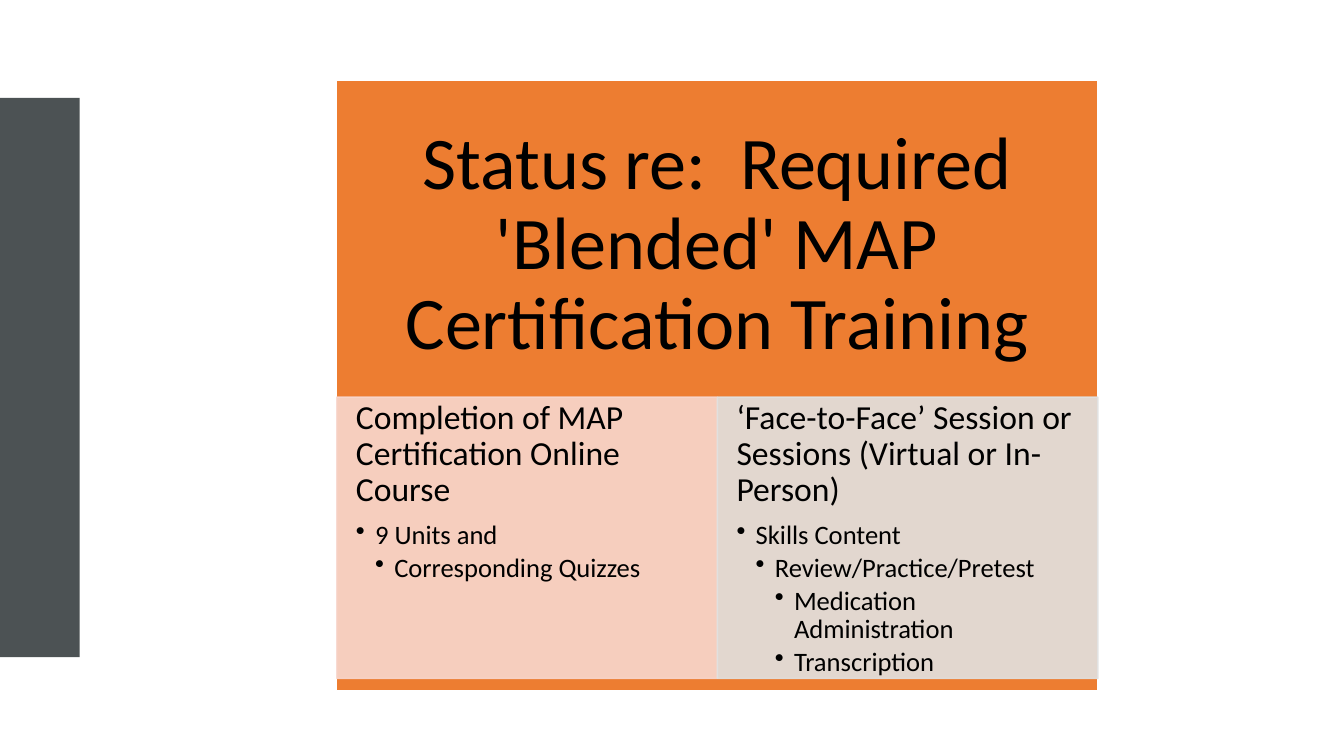
from lxml.etree import SubElement
from pptx import Presentation
from pptx.dml.color import RGBColor
from pptx.enum.shapes import MSO_SHAPE
from pptx.enum.text import MSO_ANCHOR, PP_ALIGN
from pptx.oxml.ns import qn
from pptx.util import Inches, Pt

COLORS = {
    "bar": "4C5254",
    "orange": "ED7D31",
    "rose": "F8D7CE",
    "gray": "E1E1E1",
    "white": "FFFFFF",
    "text": "000000",
}


class SlideBuilder:
    font = "Calibri"
    indent = 0.19

    def __init__(self, slide):
        self.s = slide

    def rect(self, x, y, w, h, fill, line=None, alpha=None):
        sp = self.s.shapes.add_shape(
            MSO_SHAPE.RECTANGLE, Inches(x), Inches(y), Inches(w), Inches(h))
        sp.shadow.inherit = False
        sp.fill.solid()
        sp.fill.fore_color.rgb = RGBColor.from_string(COLORS[fill])
        if line:
            sp.line.color.rgb = RGBColor.from_string(COLORS[line])
            sp.line.width = Pt(1)
        else:
            sp.line.fill.background()
        if alpha:
            for clr in sp._element.spPr.iter(qn("a:srgbClr")):
                SubElement(clr, qn("a:alpha"), val=str(alpha * 1000))
        return sp

    def textbox(self, x, y, w, h):
        return self.s.shapes.add_textbox(
            Inches(x), Inches(y), Inches(w), Inches(h))

    def frame(self, sp, inset_x, inset_y, anchor):
        tf = sp.text_frame
        tf.word_wrap = True
        tf.vertical_anchor = anchor
        tf.margin_left = tf.margin_right = Inches(inset_x)
        tf.margin_top = tf.margin_bottom = Inches(inset_y)
        return tf

    def paragraph(self, tf, text, size, after, align=PP_ALIGN.LEFT, level=0):
        p = tf.paragraphs[0]
        if p.runs:
            p = tf.add_paragraph()
        p.alignment = align
        p.line_spacing = 0.9
        p.space_after = Pt(after)
        if level:
            p.level = level
            pPr = p._p.get_or_add_pPr()
            pPr.set("marL", str(Inches(self.indent * level)))
            pPr.set("indent", str(-Inches(self.indent)))
            SubElement(pPr, qn("a:buChar"), char="•")
        r = p.add_run()
        r.text = text
        r.font.name = self.font
        r.font.size = Pt(size)
        r.font.color.rgb = RGBColor.from_string(COLORS["text"])

    def panel(self, x, y, w, h, fill, heading, bullets):
        sp = self.rect(x, y, w, h, fill, line=fill, alpha=90)
        tf = self.frame(sp, 0.19, 0.03, MSO_ANCHOR.TOP)
        self.paragraph(tf, heading, 24, 9)
        for level, text in bullets:
            self.paragraph(tf, text, 19, 2.85, level=level)


def main():
    prs = Presentation()
    prs.slide_width, prs.slide_height = Inches(13.33), Inches(7.5)
    b = SlideBuilder(prs.slides.add_slide(prs.slide_layouts[6]))

    # Side bar and orange block
    b.rect(0, 0.97, 0.79, 5.55, "bar")
    left, top, width = 3.34, 0.8, 7.55
    b.rect(left, top, width, 6.05, "orange", line="white")

    # Title
    title = b.textbox(left, top, width, 3.27)
    tf = b.frame(title, 0.41, 0.41, MSO_ANCHOR.MIDDLE)
    b.paragraph(tf, "Status re:  Required 'Blended' MAP Certification Training",
                53, 0, PP_ALIGN.CENTER)

    # Two panels side by side
    panels = [
        ("rose", "Completion of MAP Certification Online Course",
         [(1, "9 Units and"), (2, "Corresponding Quizzes")]),
        ("gray", "‘Face-to-Face’ Session or Sessions (Virtual or In-Person)",
         [(1, "Skills Content"), (2, "Review/Practice/Pretest"),
          (3, "Medication Administration"), (3, "Transcription")]),
    ]
    panel_w = width / len(panels)
    for i, (fill, heading, bullets) in enumerate(panels):
        b.panel(left + i * panel_w, 3.94, panel_w, 2.79, fill, heading, bullets)

    prs.save("out.pptx")


if __name__ == "__main__":
    main()
